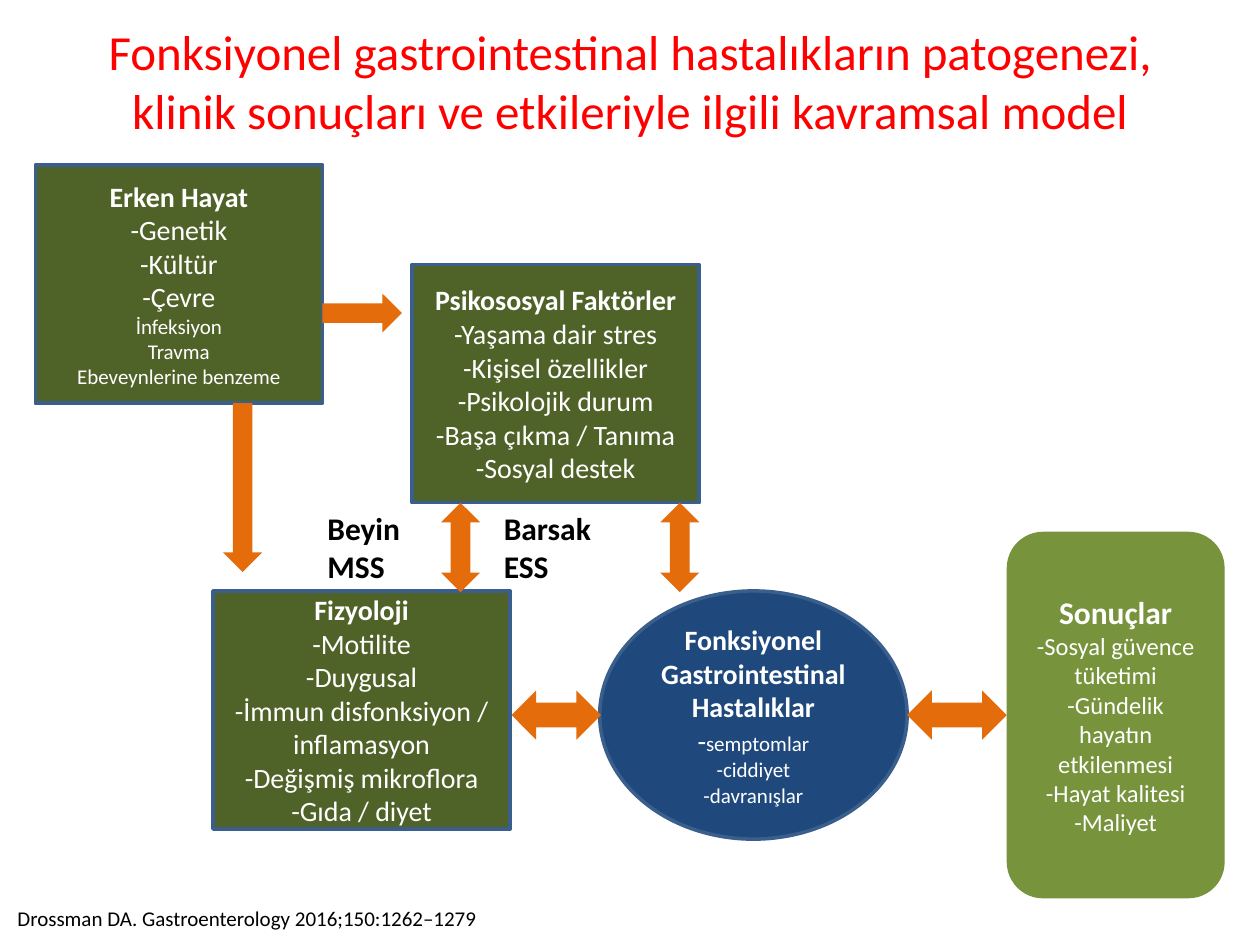
from dataclasses import dataclass

from pptx import Presentation
from pptx.dml.color import RGBColor
from pptx.enum.shapes import MSO_SHAPE
from pptx.enum.text import MSO_ANCHOR, MSO_AUTO_SIZE, PP_ALIGN
from pptx.shapes.autoshape import Shape
from pptx.slide import Slide
from pptx.text.text import TextFrame
from pptx.util import Inches, Pt


@dataclass(frozen=True)
class Theme:
    font: str = "Calibri"
    title: RGBColor = RGBColor(0xFF, 0x00, 0x00)
    dark_text: RGBColor = RGBColor(0x00, 0x00, 0x00)
    light_text: RGBColor = RGBColor(0xFF, 0xFF, 0xFF)
    factor: RGBColor = RGBColor(0x4F, 0x62, 0x28)
    disorder: RGBColor = RGBColor(0x1F, 0x49, 0x7D)
    outcome: RGBColor = RGBColor(0x77, 0x93, 0x3C)
    outline: RGBColor = RGBColor(0x3A, 0x5F, 0x8C)
    arrow: RGBColor = RGBColor(0xE4, 0x6C, 0x0A)
    title_size: int = 28
    large: int = 18
    body: int = 16
    medium: int = 14
    small: int = 12
    outline_width: int = 2


THEME = Theme()


@dataclass(frozen=True)
class Area:
    left: float
    top: float
    width: float
    height: float


@dataclass(frozen=True)
class Words:
    text: str
    size: int = THEME.body
    bold: bool = False


Paragraphs = list[list[Words]]


@dataclass(frozen=True)
class Node:
    area: Area
    preset: MSO_SHAPE
    fill: RGBColor
    paragraphs: Paragraphs
    outlined: bool = True


@dataclass(frozen=True)
class Arrow:
    area: Area
    preset: MSO_SHAPE


def lines(*texts: str, size: int = THEME.body, bold: bool = False) -> Paragraphs:
    """Make one single-run paragraph of each text."""
    return [[Words(text, size, bold)] for text in texts]


def heading(*texts: str, size: int = THEME.body) -> Paragraphs:
    return lines(*texts, size=size, bold=True)


def write(frame: TextFrame, paragraphs: Paragraphs, color: RGBColor, align: PP_ALIGN) -> None:
    for index, words_in_line in enumerate(paragraphs):
        paragraph = frame.add_paragraph() if index else frame.paragraphs[0]
        paragraph.alignment = align
        for words in words_in_line:
            run = paragraph.add_run()
            run.text = words.text
            run.font.name = THEME.font
            run.font.size = Pt(words.size)
            run.font.bold = words.bold
            run.font.color.rgb = color


def inches(area: Area) -> tuple[Inches, Inches, Inches, Inches]:
    return Inches(area.left), Inches(area.top), Inches(area.width), Inches(area.height)


def draw_shape(slide: Slide, area: Area, preset: MSO_SHAPE, fill: RGBColor) -> Shape:
    """Draw a flat filled shape without outline or shadow."""
    shape = slide.shapes.add_shape(preset, *inches(area))
    shape.shadow.inherit = False
    shape.fill.solid()
    shape.fill.fore_color.rgb = fill
    shape.line.fill.background()
    return shape


def draw_node(slide: Slide, node: Node) -> None:
    shape = draw_shape(slide, node.area, node.preset, node.fill)
    if node.outlined:
        shape.line.color.rgb = THEME.outline
        shape.line.width = Pt(THEME.outline_width)
    shape.text_frame.word_wrap = True
    shape.text_frame.vertical_anchor = MSO_ANCHOR.MIDDLE
    write(shape.text_frame, node.paragraphs, THEME.light_text, PP_ALIGN.CENTER)


def draw_title(slide: Slide, text: str) -> None:
    frame = slide.shapes.add_textbox(*inches(Area(0.5, 0.21, 9, 0.85))).text_frame
    frame.word_wrap = True
    frame.vertical_anchor = MSO_ANCHOR.MIDDLE
    write(frame, lines(text, size=THEME.title_size), THEME.title, PP_ALIGN.CENTER)


def draw_label(slide: Slide, area: Area, paragraphs: Paragraphs) -> None:
    frame = slide.shapes.add_textbox(*inches(area)).text_frame
    frame.word_wrap = False
    frame.auto_size = MSO_AUTO_SIZE.SHAPE_TO_FIT_TEXT
    write(frame, paragraphs, THEME.dark_text, PP_ALIGN.LEFT)


NODES = [
    Node(Area(0.28, 1.31, 2.28, 1.89), MSO_SHAPE.RECTANGLE, THEME.factor,
         heading("Erken Hayat")
         + lines("-Genetik", "-Kültür", "-Çevre")
         + lines("İnfeksiyon", "Travma", "Ebeveynlerine benzeme", size=THEME.small)),
    Node(Area(3.27, 2.1, 2.28, 1.89), MSO_SHAPE.RECTANGLE, THEME.factor,
         heading("Psikososyal Faktörler")
         + lines("-Yaşama dair stres", "-Kişisel özellikler", "-Psikolojik durum",
                 "-Başa çıkma / Tanıma", "-Sosyal destek")),
    Node(Area(1.69, 4.69, 2.36, 1.89), MSO_SHAPE.RECTANGLE, THEME.factor,
         heading("Fizyoloji")
         + lines("-Motilite", "-Duygusal", "-İmmun disfonksiyon / inflamasyon",
                 "-Değişmiş mikroflora", "-Gıda / diyet")),
    Node(Area(4.76, 4.69, 2.44, 1.97), MSO_SHAPE.OVAL, THEME.disorder,
         heading("Fonksiyonel", "Gastrointestinal Hastalıklar")
         + [[Words("-"), Words("semptomlar", THEME.small)]]
         + lines("-ciddiyet", "-davranışlar", size=THEME.small)),
    Node(Area(7.99, 4.22, 1.73, 2.91), MSO_SHAPE.ROUNDED_RECTANGLE, THEME.outcome,
         heading("Sonuçlar", size=THEME.large)
         + lines("-Sosyal güvence tüketimi", "-Gündelik hayatın etkilenmesi",
                 "-Hayat kalitesi", "-Maliyet", size=THEME.medium),
         outlined=False),
]

ARROWS = [
    Arrow(Area(2.56, 2.33, 0.63, 0.31), MSO_SHAPE.RIGHT_ARROW),
    Arrow(Area(1.77, 3.2, 0.31, 1.34), MSO_SHAPE.DOWN_ARROW),
    Arrow(Area(3.5, 3.99, 0.31, 0.71), MSO_SHAPE.UP_DOWN_ARROW),
    Arrow(Area(5.24, 3.99, 0.31, 0.71), MSO_SHAPE.UP_DOWN_ARROW),
    Arrow(Area(4.06, 5.48, 0.71, 0.39), MSO_SHAPE.LEFT_RIGHT_ARROW),
    Arrow(Area(7.2, 5.48, 0.79, 0.39), MSO_SHAPE.LEFT_RIGHT_ARROW),
]

LABELS = [
    (Area(0.04, 7.14, 3.9, 0.3),
     lines("Drossman DA. Gastroenterology 2016;150:1262–1279", size=THEME.small)),
    (Area(2.5, 3.99, 0.78, 0.71), heading("Beyin", "MSS", size=THEME.large)),
    (Area(3.9, 3.99, 0.9, 0.71), heading("Barsak", "ESS", size=THEME.large)),
]


def main() -> None:
    presentation = Presentation()
    presentation.slide_width = Inches(10)
    presentation.slide_height = Inches(7.5)
    slide = presentation.slides.add_slide(presentation.slide_layouts[6])
    draw_title(slide, "Fonksiyonel gastrointestinal hastalıkların patogenezi, "
                      "klinik sonuçları ve etkileriyle ilgili kavramsal model")
    for node in NODES:
        draw_node(slide, node)
    for area, paragraphs in LABELS:
        draw_label(slide, area, paragraphs)
    for arrow in ARROWS:
        draw_shape(slide, arrow.area, arrow.preset, THEME.arrow)
    presentation.save("out.pptx")


if __name__ == "__main__":
    main()
